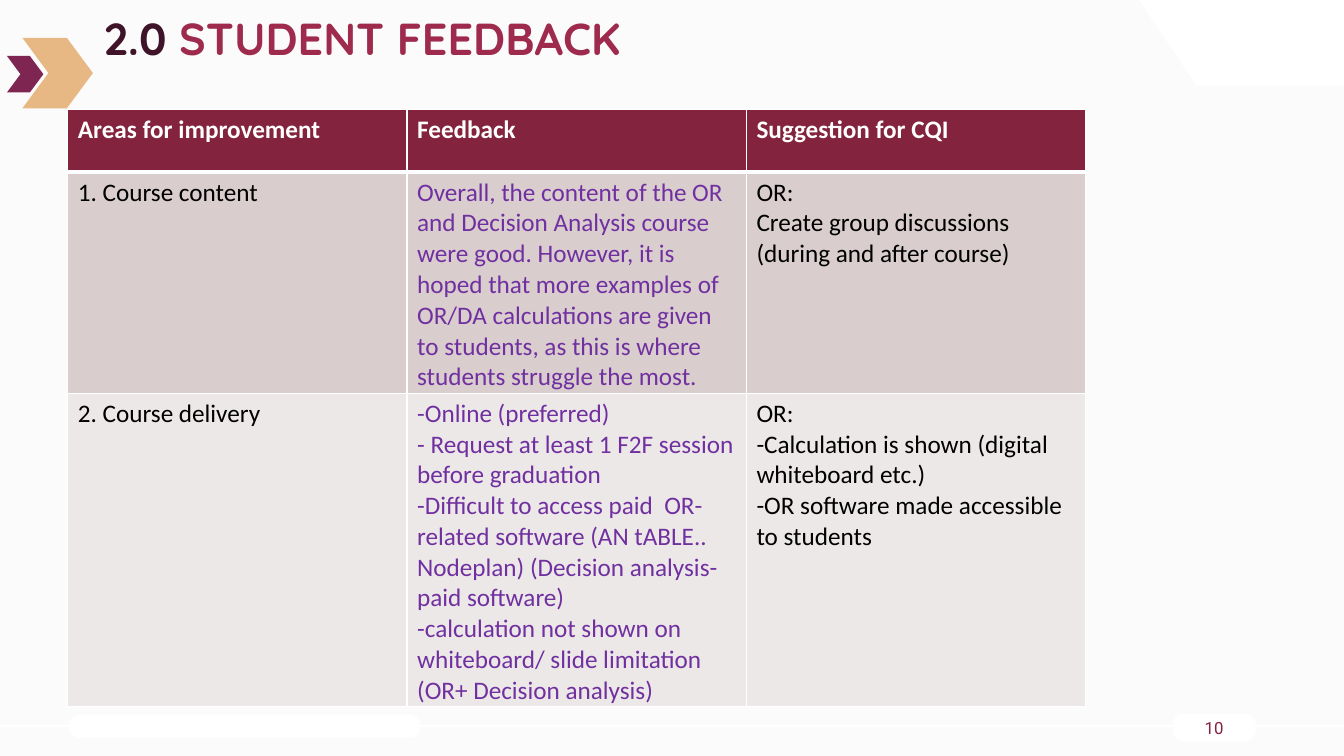
from lxml import etree
from pptx import Presentation
from pptx.dml.color import RGBColor
from pptx.enum.shapes import MSO_CONNECTOR, MSO_SHAPE
from pptx.enum.text import MSO_ANCHOR, PP_ALIGN
from pptx.oxml.ns import qn
from pptx.util import Pt

CHEVRON = MSO_SHAPE.CHEVRON
PILL = MSO_SHAPE.ROUNDED_RECTANGLE
STRAIGHT = MSO_CONNECTOR.STRAIGHT
TOP, MIDDLE = MSO_ANCHOR.TOP, MSO_ANCHOR.MIDDLE
LEFT, CENTER = PP_ALIGN.LEFT, PP_ALIGN.CENTER

WIDTH, HEIGHT = 960, 540
TITLE_ONLY = 5

COLORS = {
    "background": "FBFBFB",
    "white": "FFFFFF",
    "black": "000000",
    "plum": "7F2551",
    "sand": "E8B884",
    "title_number": "3F1328",
    "title": "9E2A4D",
    "header": "83233D",
    "page_number": "83233E",
    "feedback": "7030A0",
    "band_dark": "D9CDCE",
    "band_light": "EDE8E8",
}

COLUMN_WIDTH = 242.4
ROW_HEIGHTS = [45, 158, 223.5]
ROW_FILLS = ["header", "band_dark", "band_light"]
COLUMN_COLORS = ["black", "feedback", "black"]
ROWS = [
    [["Areas for improvement"], ["Feedback"], ["Suggestion for CQI"]],
    [
        ["1. Course content"],
        ["Overall, the content of the OR and Decision Analysis course were good. "
         "However, it is hoped that more examples of OR/DA calculations are given "
         "to students, as this is where students struggle the most."],
        ["OR:", "Create group discussions (during and after course)"],
    ],
    [
        ["2. Course delivery"],
        ["-Online (preferred)",
         "- Request at least 1 F2F session before graduation",
         "-Difficult to access paid  OR-related software (AN tABLE.. Nodeplan) "
         "(Decision analysis- paid software)",
         "-calculation not shown on whiteboard/ slide limitation (OR+ Decision analysis)"],
        ["OR:",
         "-Calculation is shown (digital whiteboard etc.)",
         "-OR software made accessible to students"],
    ],
]


def rgb(name):
    return RGBColor.from_string(COLORS[name])


def write_text(frame, paragraphs, *, font, size, bold=False, align=LEFT, anchor=TOP):
    """Fill a frame; each paragraph is a list of (text, color name) runs."""
    frame.word_wrap = True
    frame.vertical_anchor = anchor
    for index, runs in enumerate(paragraphs):
        paragraph = frame.paragraphs[0] if index == 0 else frame.add_paragraph()
        paragraph.alignment = align
        for text, color in runs:
            run = paragraph.add_run()
            run.text = text
            run.font.name = font
            run.font.size = Pt(size)
            run.font.bold = bold
            run.font.color.rgb = rgb(color)


def paint(shape, color):
    shape.shadow.inherit = False
    shape.fill.solid()
    shape.fill.fore_color.rgb = rgb(color)
    shape.line.fill.background()


def add_preset(slide, preset, left, top, width, height, color, adjustment):
    shape = slide.shapes.add_shape(preset, Pt(left), Pt(top), Pt(width), Pt(height))
    shape.adjustments[0] = adjustment
    paint(shape, color)
    return shape


def add_corner(slide):
    builder = slide.shapes.build_freeform(Pt(813.6), 0)
    points = [(WIDTH, 0), (WIDTH, 61.2), (854.6, 61.2)]
    builder.add_line_segments([(Pt(x), Pt(y)) for x, y in points], close=True)
    paint(builder.convert_to_shape(), "white")


def add_footer_line(slide, y):
    line = slide.shapes.add_connector(STRAIGHT, 0, Pt(y), Pt(WIDTH), Pt(y))
    line.line.color.rgb = rgb("white")
    line.line.width = Pt(1.5)
    etree.SubElement(line._element.spPr, qn("a:effectLst"))


def add_title(slide):
    title = slide.shapes.title
    title.left, title.top, title.width, title.height = Pt(67), Pt(4.3), Pt(540), Pt(46)
    write_text(title.text_frame, [[("2.0 ", "title_number"), ("STUDENT FEEDBACK", "title")]],
               font="Quicksand", size=32, bold=True)


def set_borders(cell, bottom_width):
    properties = cell._tc.get_or_add_tcPr()
    sides = [("a:lnL", 1), ("a:lnR", 1), ("a:lnT", 1), ("a:lnB", bottom_width)]
    for index, (tag, width) in enumerate(sides):
        border = etree.Element(qn(tag), w=str(Pt(width)))
        fill = etree.SubElement(border, qn("a:solidFill"))
        etree.SubElement(fill, qn("a:srgbClr"), val=COLORS["white"])
        properties.insert(index, border)


def add_feedback_table(slide):
    columns = len(COLUMN_COLORS)
    table = slide.shapes.add_table(len(ROWS), columns, Pt(48.4), Pt(78),
                                   Pt(COLUMN_WIDTH * columns), Pt(sum(ROW_HEIGHTS))).table
    for column in table.columns:
        column.width = Pt(COLUMN_WIDTH)
    for row_index, row in enumerate(ROWS):
        is_header = row_index == 0
        table.rows[row_index].height = Pt(ROW_HEIGHTS[row_index])
        for column_index, lines in enumerate(row):
            cell = table.cell(row_index, column_index)
            cell.margin_bottom = 0
            cell.fill.solid()
            cell.fill.fore_color.rgb = rgb(ROW_FILLS[row_index])
            set_borders(cell, 3 if is_header else 1)
            color = "white" if is_header else COLUMN_COLORS[column_index]
            write_text(cell.text_frame, [[(line, color)] for line in lines],
                       font="Calibri", size=18, bold=is_header)


def main():
    presentation = Presentation()
    presentation.slide_width, presentation.slide_height = Pt(WIDTH), Pt(HEIGHT)
    slide = presentation.slides.add_slide(presentation.slide_layouts[TITLE_ONLY])
    slide.background.fill.solid()
    slide.background.fill.fore_color.rgb = rgb("background")

    add_footer_line(slide, 518.4)
    add_preset(slide, PILL, 49.5, 510.5, 250.5, 16.5, "white", 0.44)
    page_pill = add_preset(slide, PILL, 837.4, 509.5, 59.8, 20.2, "white", 0.44)
    page_pill.text_frame.margin_top = page_pill.text_frame.margin_bottom = 0
    write_text(page_pill.text_frame, [[("10", "page_number")]],
               font="Roboto", size=12, align=CENTER, anchor=MIDDLE)
    add_corner(slide)
    add_preset(slide, CHEVRON, 5, 40, 26, 26, "plum", 0.37)
    add_preset(slide, CHEVRON, 16, 27, 50.4, 50.4, "sand", 0.37)
    add_title(slide)
    add_feedback_table(slide)
    presentation.save("out.pptx")


if __name__ == "__main__":
    main()
